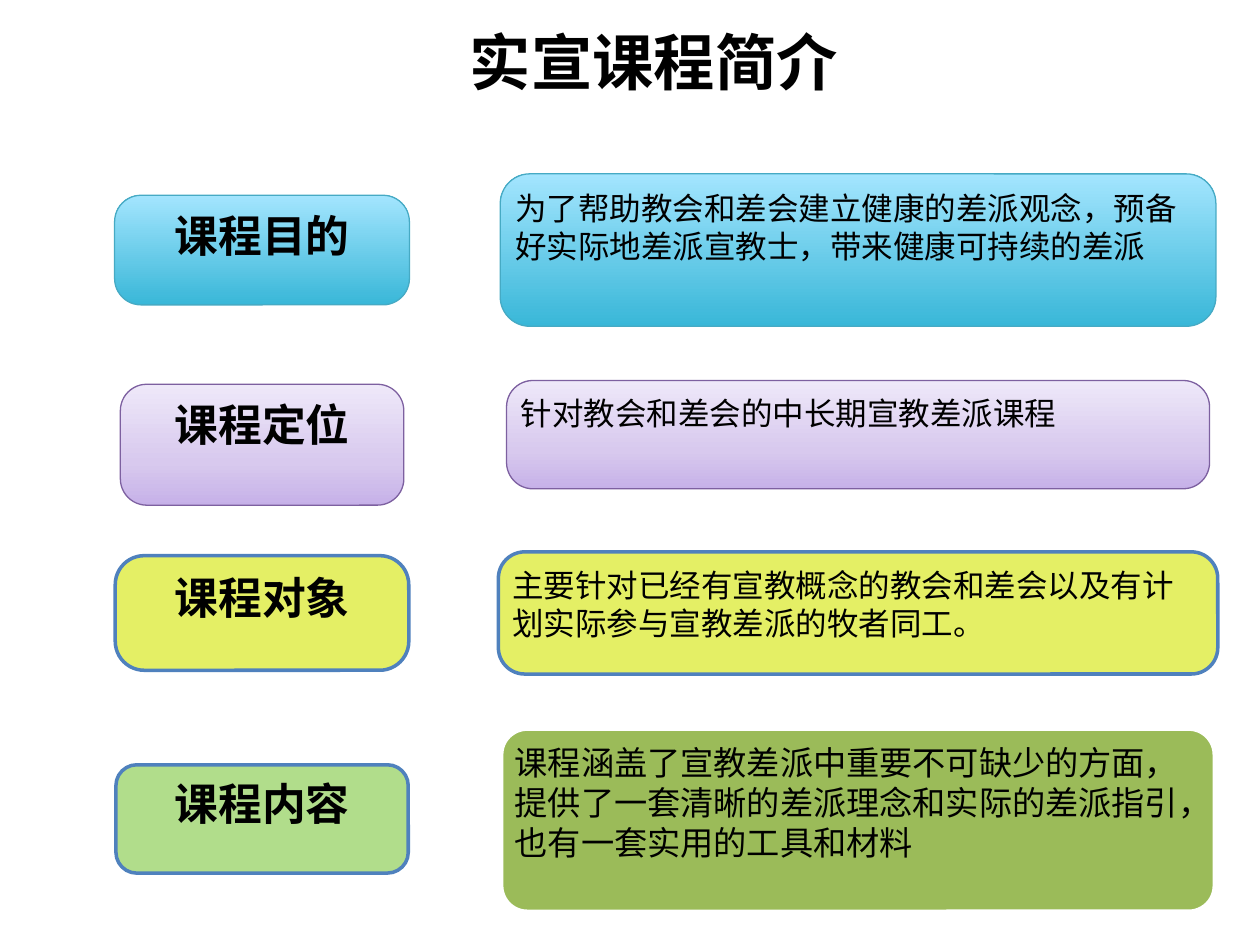
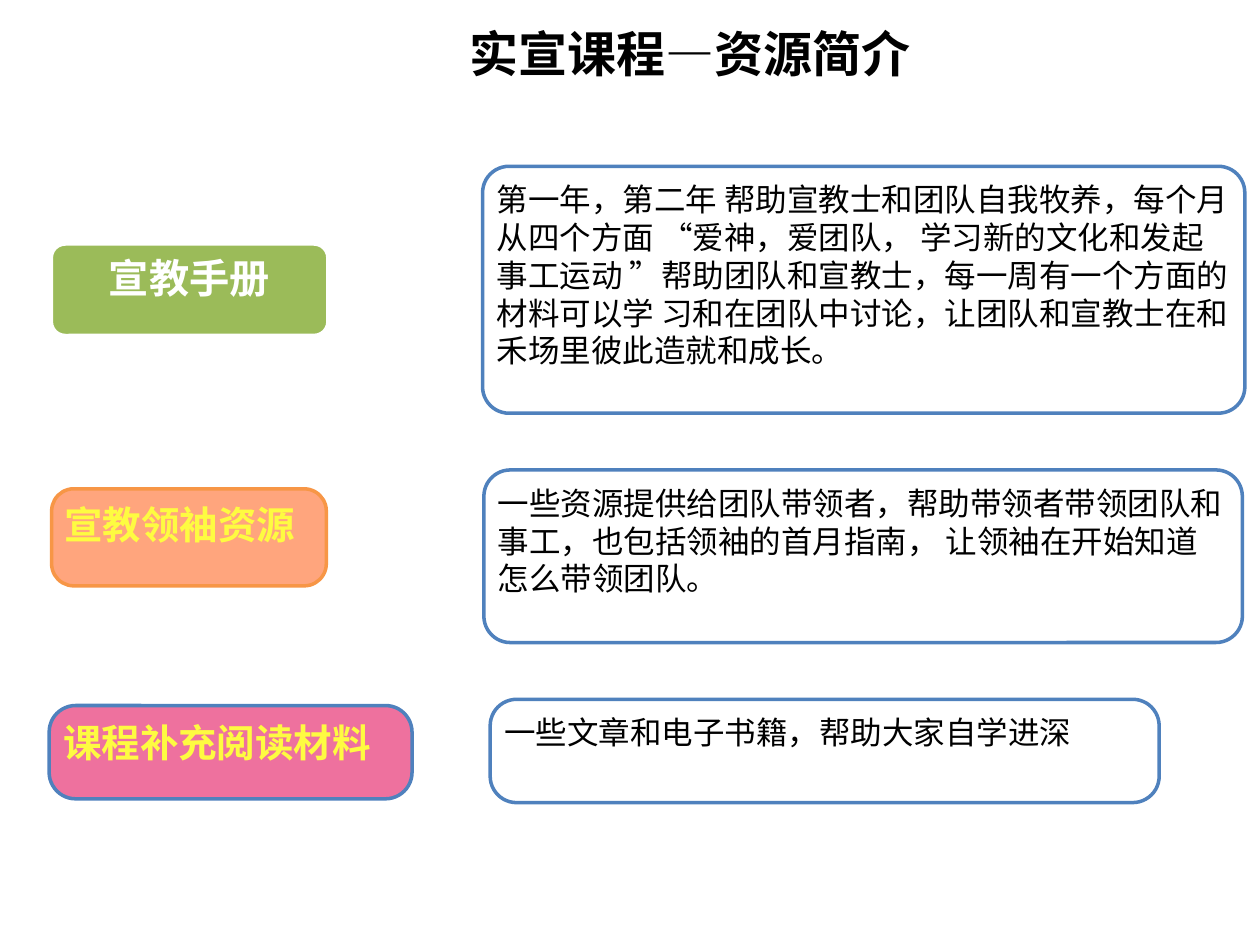
from copy import deepcopy
from dataclasses import dataclass

from pptx import Presentation
from pptx import util as u
from pptx.dml.color import RGBColor
from pptx.enum import lang, shapes, text
from pptx.oxml import ns
from lxml import etree

COLUMNS, ROWS = 100, 75


@dataclass(frozen=True)
class Paint:
    """Fill stops run from bottom to top; a single stop is a solid fill."""
    stops: tuple
    line: str
    weight: float = 2


class Theme:
    font = "Noto Sans CJK KR"
    latin_font = "Arial"
    black, white, yellow = "000000", "FFFFFF", "FEFB41"
    blue_line = "4F81BD"
    title_size, long_title_size = 35, 28
    label_size, resource_size, body_size = 25, 22, 18
    inset = 0.05
    radius = 2.1

    aqua = Paint(((0, "39B7D8"), (1, "A3E5FE")), "46AAC4", 0.75)
    lilac = Paint(((0, "C6B1E8"), (0.35, "D8C9EE"), (1, "EEE8F9")), "7D60A0", 0.75)
    lime = Paint(((0, "E4EF65"),), blue_line)
    mint = Paint(((0, "B1DD8B"),), blue_line)
    green = Paint(((0, "9BBB59"),), white, 3)
    peach = Paint(((0, "FFA57D"),), "F79646")
    pink = Paint(((0, "EE719E"),), blue_line)
    plain = Paint(((0, white),), blue_line)


class Deck:
    def __init__(self, theme):
        self.theme = theme
        self.presentation = Presentation()
        self.presentation.slide_width = u.Inches(10)
        self.presentation.slide_height = u.Inches(7.5)
        self.slide = None

    def grid(self, left, top, width, height):
        column = self.presentation.slide_width / COLUMNS
        row = self.presentation.slide_height / ROWS
        return [int(length) for length in
                (left * column, top * row, width * column, height * row)]

    def add_slide(self, title, size, height):
        layout = self.presentation.slide_layouts[5]
        self.slide = self.presentation.slides.add_slide(layout)
        shape = self.slide.shapes.title
        shape.left, shape.top, shape.width, shape.height = self.grid(36.8, 1.4, 36.3, height)
        self.set_words(shape, title, size, bold=True)

    def set_words(self, shape, words, size, color=Theme.black, bold=False,
                  align=text.PP_ALIGN.LEFT, font=Theme.font):
        frame = shape.text_frame
        frame.text = words
        frame.word_wrap = True
        frame.auto_size = text.MSO_AUTO_SIZE.NONE
        frame.vertical_anchor = text.MSO_ANCHOR.TOP
        frame.margin_left = frame.margin_right = u.Inches(self.theme.inset)
        frame.margin_top = frame.margin_bottom = u.Inches(self.theme.inset)
        paragraph = frame.paragraphs[0]
        paragraph.alignment = align
        for run in paragraph.runs:
            run.font.size = u.Pt(size)
            run.font.bold = bold
            run.font.color.rgb = RGBColor.from_string(color)
            run.font.name = font
            run.font.language_id = lang.MSO_LANGUAGE_ID.SIMPLIFIED_CHINESE
            east_asian = etree.SubElement(run.font._element, ns.qn("a:ea"))
            east_asian.set("typeface", self.theme.font)

    def paint(self, shape, paint):
        shape.shadow.inherit = False
        shape.line.color.rgb = RGBColor.from_string(paint.line)
        shape.line.width = u.Pt(paint.weight)
        fill = shape.fill
        if len(paint.stops) == 1:
            fill.solid()
            fill.fore_color.rgb = RGBColor.from_string(paint.stops[0][1])
            return
        fill.gradient()
        fill.gradient_angle = 90
        stop_list = next(shape._element.spPr.iter(ns.qn("a:gsLst")))
        while len(stop_list) < len(paint.stops):
            stop_list.append(deepcopy(stop_list[0]))
        for stop, (position, color) in zip(fill.gradient_stops, paint.stops):
            stop.position = position
            stop.color.rgb = RGBColor.from_string(color)

    def box(self, place, paint, words, size, radius=Theme.radius, **style):
        shape = self.slide.shapes.add_shape(
            shapes.MSO_SHAPE.ROUNDED_RECTANGLE, *self.grid(*place))
        shape.adjustments[0] = radius / min(place[2:])
        self.paint(shape, paint)
        self.set_words(shape, words, size, **style)

    def label(self, place, paint, words, size=Theme.label_size, **style):
        self.box(place, paint, words, size, bold=True, **style)

    def card(self, place, paint, words, size=Theme.body_size, **style):
        self.box(place, paint, words, size, **style)


def centred(center, top, width, height):
    return center - width / 2, top, width, height


def add_course_slide(deck):
    theme = deck.theme
    label_center, card_center = 20.8, 68.1
    rows = [
        (theme.aqua, "课程目的", (15.5, 23.4, 8.7), {},
         theme.aqua, "为了帮助教会和差会建立健康的差派观念，预备好实际地差派宣教士，带来健康可持续的差派",
         (13.8, 56.8, 12.1), {"radius": 2.35}),
        (theme.lilac, "课程定位", (30.5, 22.5, 9.6), {},
         theme.lilac, "针对教会和差会的中长期宣教差派课程", (30.2, 55.8, 8.6), {}),
        (theme.lime, "课程对象", (44.1, 23.3, 9.1), {"radius": 2.3},
         theme.lime, "主要针对已经有宣教概念的教会和差会以及有计划实际参与宣教差派的牧者同工。",
         (43.8, 57.1, 9.7), {"font": theme.latin_font}),
        (theme.mint, "课程内容", (60.7, 23.2, 8.6), {"radius": 1.65},
         theme.green, "课程涵盖了宣教差派中重要不可缺少的方面，提供了一套清晰的差派理念和实际的差派指引，也有一套实用的工具和材料",
         (57.8, 56.7, 14.6), {"size": 19}),
    ]
    deck.add_slide("实宣课程简介", theme.title_size, 7.8)
    for paint, name, name_place, name_style, card_paint, words, card_place, card_style in rows:
        deck.label(centred(label_center, *name_place), paint, name,
                   align=text.PP_ALIGN.CENTER, **name_style)
        deck.card(centred(card_center, *card_place), card_paint, words, **card_style)


def add_resource_slide(deck):
    theme = deck.theme
    accent = {"size": theme.resource_size, "color": theme.yellow}
    rows = [
        (theme.green, "宣教手册", (4, 19.3, 22.1, 7.4),
         {"size": 23, "color": theme.white, "radius": 1.17, "align": text.PP_ALIGN.CENTER},
         "第一年，第二年 帮助宣教士和团队自我牧养，每个月从四个方面 “爱神，爱团队， "
         "学习新的文化和发起事工运动 ”帮助团队和宣教士，每一周有一个方面的材料可以学 "
         "习和在团队中讨论，让团队和宣教士在和禾场里彼此造就和成长。",
         (38.3, 13.2, 60.5, 19.6)),
        (theme.peach, "宣教领袖资源", (4.1, 38.8, 21.8, 7.7), {"radius": 1.75, **accent},
         "一些资源提供给团队带领者，帮助带领者带领团队和事工，也包括领袖的首月指南， "
         "让领袖在开始知道怎么带领团队。",
         (38.4, 37.3, 60.2, 13.7)),
        (theme.pink, "课程补充阅读材料", (3.9, 56, 28.8, 7.4), accent,
         "一些文章和电子书籍，帮助大家自学进深", (38.9, 55.5, 53.1, 8.2)),
    ]
    deck.add_slide("实宣课程—资源简介", theme.long_title_size, 6.6)
    for paint, name, name_place, name_style, words, card_place in rows:
        deck.label(name_place, paint, name, **name_style)
        deck.card(card_place, theme.plain, words)


def main():
    deck = Deck(Theme)
    add_course_slide(deck)
    add_resource_slide(deck)
    deck.presentation.save("out.pptx")


if __name__ == "__main__":
    main()
